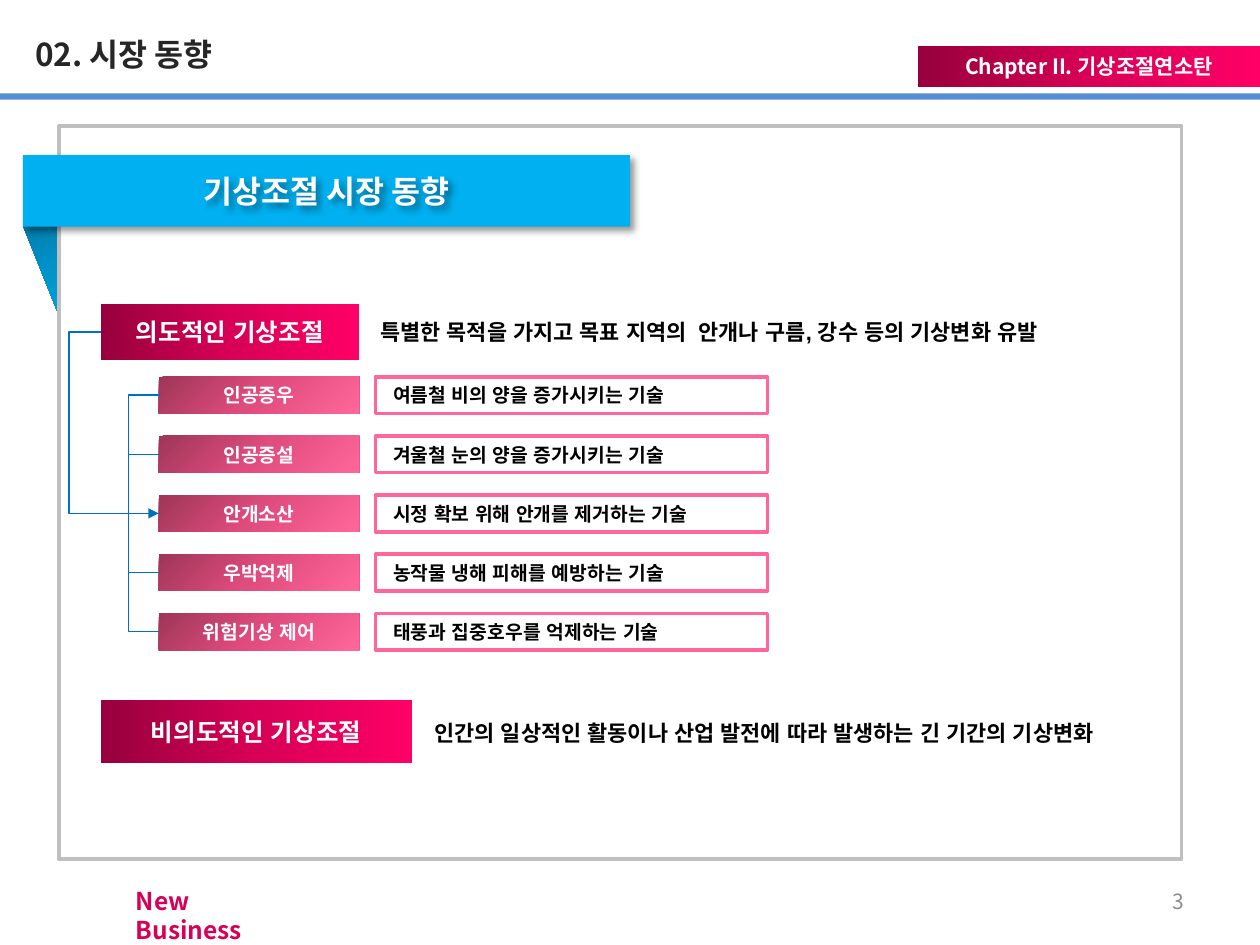
from lxml import etree
from pptx import Presentation
from pptx.dml.color import RGBColor
from pptx.enum import shapes, text
from pptx.oxml import ns
from pptx.util import Pt

WHITE = RGBColor(0xFF, 0xFF, 0xFF)
BLACK = RGBColor(0, 0, 0)
TITLE_GRAY = RGBColor(0x26, 0x26, 0x26)
NUMBER_GRAY = RGBColor(0x8C, 0x8C, 0x8C)
FRAME_GRAY = RGBColor(0xBF, 0xBF, 0xBF)
RULE_BLUE = RGBColor(0x55, 0x8E, 0xD5)
RIBBON_BLUE = RGBColor(0x00, 0xB0, 0xF0)
LINK_BLUE = RGBColor(0x00, 0x70, 0xC0)
PINK = RGBColor(0xFF, 0x66, 0x99)
CRIMSON = tuple(map(RGBColor.from_string, ("97003C", "D70056", "FF0066")))
ROSE = tuple(map(RGBColor.from_string, ("9E3658", "E14C7E", "FF6699")))
FOLD = tuple(map(RGBColor.from_string, ("00688E", "0094CA", "00B0F0")))

NOTO = "Noto Sans CJK KR"
ARIAL = "Arial"
LEFT, CENTER, RIGHT = text.PP_ALIGN.LEFT, text.PP_ALIGN.CENTER, text.PP_ALIGN.RIGHT

TECHNIQUES = [
    ("인공증우", "여름철 비의 양을 증가시키는 기술"),
    ("인공증설", "겨울철 눈의 양을 증가시키는 기술"),
    ("안개소산", "시정 확보 위해 안개를 제거하는 기술"),
    ("우박억제", "농작물 냉해 피해를 예방하는 기술"),
    ("위험기상 제어", "태풍과 집중호우를 억제하는 기술"),
]
CATEGORIES = [
    ("의도적인 기상조절", (57.6, 173.5, 147.6, 32.4),
     "특별한 목적을 가지고 목표 지역의  안개나 구름, 강수 등의 기상변화 유발", (210.2, 178.6, 455, 22.3)),
    ("비의도적인 기상조절", (57.6, 400.3, 177.8, 36),
     "인간의 일상적인 활동이나 산업 발전에 따라 발생하는 긴 기간의 기상변화", (241.2, 407.5, 431.3, 22.3)),
]
RIBBON = (13, 88.6, 347, 41)
ROW_TOP, ROW_STEP, ROW_HEIGHT = 215.3, 33.8, 21
LABEL_LEFT, LABEL_WIDTH = 90.7, 114.5
NOTE_LEFT, NOTE_WIDTH = 214.6, 223.9

presentation = Presentation()
presentation.slide_width, presentation.slide_height = Pt(720), Pt(540)
slide = presentation.slides.add_slide(presentation.slide_layouts[6])


def gradient(colors, angle):
    fill = etree.Element(ns.qn("a:gradFill"), rotWithShape="1")
    stops = etree.SubElement(fill, ns.qn("a:gsLst"))
    for position, color in zip((0, 50000, 100000), colors):
        stop = etree.SubElement(stops, ns.qn("a:gs"), pos=str(position))
        etree.SubElement(stop, ns.qn("a:srgbClr"), val=str(color))
    etree.SubElement(fill, ns.qn("a:lin"), ang=str(angle * 60000), scaled="0")
    return fill


def add_box(box, fill=None, line=None, angle=0, kind=shapes.MSO_SHAPE.RECTANGLE):
    shape = slide.shapes.add_shape(kind, *map(Pt, box))
    shape.shadow.inherit = False
    if fill is None:
        shape.fill.background()
    elif isinstance(fill, RGBColor):
        shape.fill.solid()
        shape.fill.fore_color.rgb = fill
    else:
        shape._element.spPr.find(ns.qn("a:prstGeom")).addnext(gradient(fill, angle))
    if line is None:
        shape.line.fill.background()
    else:
        shape.line.color.rgb = line
        shape.line.width = Pt(2)
    return shape


def add_text_box(box):
    return slide.shapes.add_textbox(*map(Pt, box))


def write(shape, words, size, color, font=ARIAL, align=LEFT, bold=True, inset=7.2):
    frame = shape.text_frame
    frame.word_wrap = True
    frame.vertical_anchor = text.MSO_ANCHOR.MIDDLE
    frame.margin_top = frame.margin_bottom = 0
    frame.margin_left, frame.margin_right = Pt(inset), Pt(7.2)
    paragraph = frame.paragraphs[0]
    paragraph.alignment = align
    run = paragraph.add_run()
    run.text = words
    run.font.name, run.font.size, run.font.bold = font, Pt(size), bold
    properties = run._r.get_or_add_rPr()
    if isinstance(color, RGBColor):
        run.font.color.rgb = color
    else:
        properties.insert(0, gradient(color, 0))
    properties.find(ns.qn("a:latin")).addnext(etree.Element(ns.qn("a:ea"), typeface=font))


def cast_shadow(shape):
    shape.shadow.inherit = False
    effects = shape._element.spPr.find(ns.qn("a:effectLst"))
    shadow = etree.SubElement(effects, ns.qn("a:outerShdw"), blurRad=str(Pt(4)), dist=str(Pt(3)),
                              dir="2700000", algn="tl", rotWithShape="0")
    color = etree.SubElement(shadow, ns.qn("a:srgbClr"), val="000000")
    etree.SubElement(color, ns.qn("a:alpha"), val="40000")


def add_elbow(start, end, bend, arrow=False):
    connector = slide.shapes.add_connector(shapes.MSO_CONNECTOR.ELBOW, *map(Pt, start + end))
    connector.line.color.rgb = LINK_BLUE
    connector.line.width = Pt(0.75)
    properties = connector._element.spPr
    etree.SubElement(properties, ns.qn("a:effectLst"))
    guides = properties.find(ns.qn("a:prstGeom")).get_or_add_avLst()
    ratio = (bend - start[0]) / (end[0] - start[0])
    etree.SubElement(guides, ns.qn("a:gd"), name="adj1", fmla=f"val {round(ratio * 100000)}")
    if arrow:
        etree.SubElement(properties.find(ns.qn("a:ln")), ns.qn("a:tailEnd"), type="triangle")


add_box((0, 53.3, 720, 3.6), RULE_BLUE)
chapter = add_box((524.5, 26.2, 195.5, 23.5), CRIMSON)
write(chapter, "Chapter II. 기상조절연소탄", 12, WHITE, NOTO, CENTER)
brand = add_text_box((70.6, 502.6, 107.3, 24.5))
write(brand, "New Business", 14, CRIMSON, NOTO)
brand.text_frame.vertical_anchor = text.MSO_ANCHOR.TOP
brand.text_frame.margin_top = Pt(3.6)

fold = add_box((31.7, 102.2, 58.3, 79.2), FOLD, kind=shapes.MSO_SHAPE.ISOSCELES_TRIANGLE)
fold.rotation = 68.2
add_box((33.8, 72, 641.5, 419), WHITE, FRAME_GRAY)
cast_shadow(add_box(RIBBON, RIBBON_BLUE))
write(add_text_box((13, 16.6, 365.8, 28.8)), "02. 시장 동향", 18, TITLE_GRAY, NOTO)
heading = add_text_box(RIBBON)
write(heading, "기상조절 시장 동향", 18, WHITE, NOTO, CENTER)
cast_shadow(heading)

for name, name_box, meaning, meaning_box in CATEGORIES:
    write(add_box(name_box, CRIMSON), name, 14, WHITE, align=CENTER)
    write(add_text_box(meaning_box), meaning, 12.5, BLACK)

tops = [ROW_TOP + ROW_STEP * row for row in range(len(TECHNIQUES))]
for top, (name, meaning) in zip(tops, TECHNIQUES):
    label = add_box((LABEL_LEFT, top, LABEL_WIDTH, ROW_HEIGHT), ROSE, angle=45)
    write(label, name, 11, WHITE, align=CENTER)
    note = add_box((NOTE_LEFT, top, NOTE_WIDTH, ROW_HEIGHT), line=PINK)
    write(note, meaning, 11, BLACK, inset=10)

middles = [top + ROW_HEIGHT / 2 for top in tops]
add_elbow((57.6, 189.7), (LABEL_LEFT, middles[2]), 39.5, arrow=True)
for upper, lower in zip(middles, middles[1:]):
    add_elbow((LABEL_LEFT + 1, upper), (LABEL_LEFT, lower), 73.5)

write(add_text_box((516.2, 500.4, 167.8, 28.8)), "3", 12, NUMBER_GRAY, NOTO, RIGHT, bold=False)

presentation.save("out.pptx")
